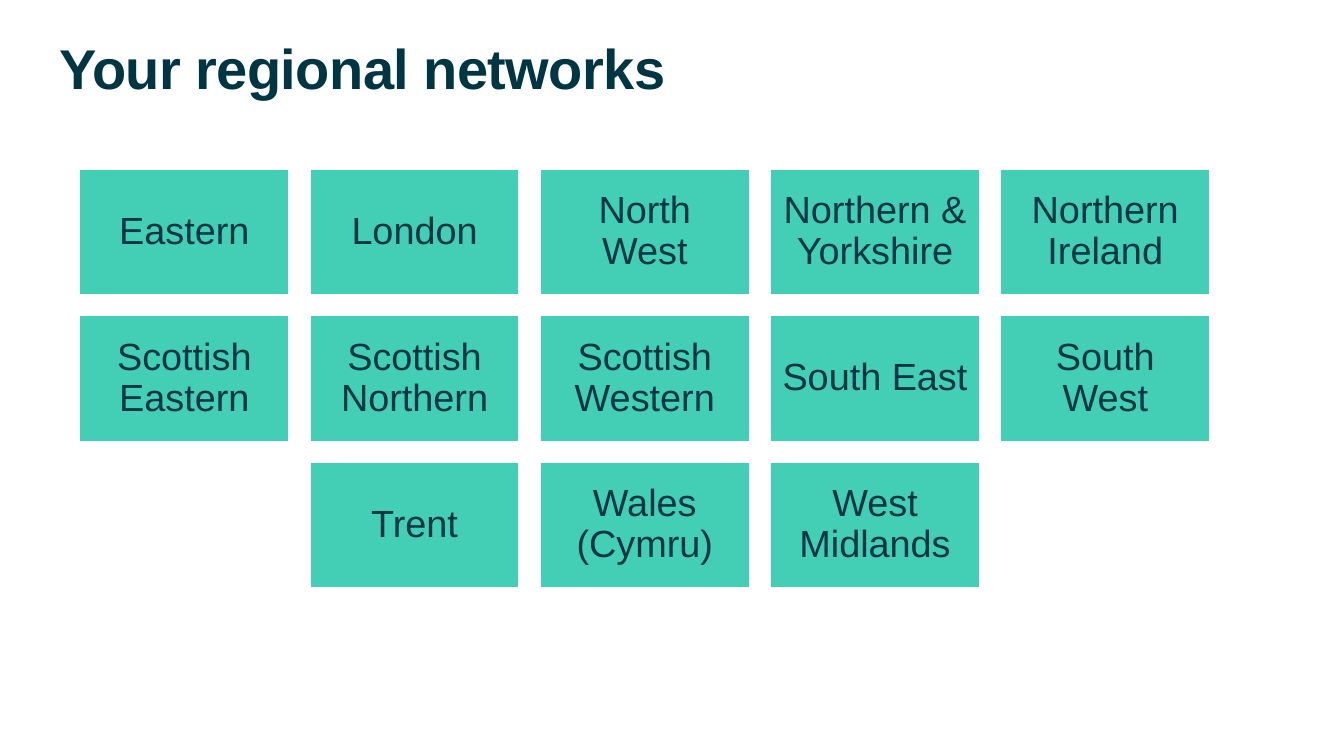
from dataclasses import dataclass

from pptx import Presentation
from pptx.dml.color import RGBColor
from pptx.enum.shapes import MSO_SHAPE
from pptx.enum.text import MSO_ANCHOR, PP_ALIGN
from pptx.util import Inches, Pt


@dataclass(frozen=True)
class Theme:
    font: str = "Arial"
    ink: RGBColor = RGBColor(0x00, 0x36, 0x43)
    tile: RGBColor = RGBColor(0x43, 0xCF, 0xB5)
    edge: RGBColor = RGBColor(0xFF, 0xFF, 0xFF)
    title_size: int = 40
    tile_size: int = 27
    line_spacing: float = 0.9
    tracking: int = -40  # hundredths of a point


@dataclass(frozen=True)
class Grid:
    """Centred rows of tiles; the gap and height follow from the tile width."""
    left: float = 0.79
    top: float = 1.68
    width: float = 11.21
    columns: int = 5
    gap_share: float = 0.1
    height_share: float = 0.6

    @property
    def tile_width(self):
        return self.width / (self.columns + (self.columns - 1) * self.gap_share)

    @property
    def tile_height(self):
        return self.tile_width * self.height_share

    def cell(self, column, row):
        gap = self.tile_width * self.gap_share
        return (self.left + column * (self.tile_width + gap),
                self.top + row * (self.tile_height + gap),
                self.tile_width, self.tile_height)


class SlideBuilder:
    def __init__(self, page, theme, grid):
        self.page, self.theme, self.grid = page, theme, grid

    def set_text(self, shape, text, size, inset=0, bold=False):
        frame = shape.text_frame
        frame.word_wrap = True
        frame.margin_left = frame.margin_right = Inches(inset)
        frame.margin_top = frame.margin_bottom = Inches(inset)
        frame.text = text
        para = frame.paragraphs[0]
        para.line_spacing = self.theme.line_spacing
        span = para.runs[0]
        span.font.name = self.theme.font
        span.font.size = Pt(size)
        span.font.bold = bold
        span.font.color.rgb = self.theme.ink
        return frame, para, span

    def title(self, text):
        box = self.page.shapes.add_textbox(*map(Inches, (0.59, 0.41, 12.2, 0.79)))
        _, _, span = self.set_text(box, text, self.theme.title_size, bold=True)
        span.font._element.set("spc", str(self.theme.tracking))

    def tile(self, text, column, row):
        box = self.page.shapes.add_shape(
            MSO_SHAPE.RECTANGLE, *map(Inches, self.grid.cell(column, row)))
        box.shadow.inherit = False
        box.fill.solid()
        box.fill.fore_color.rgb = self.theme.tile
        box.line.color.rgb = self.theme.edge
        box.line.width = Pt(1)
        frame, para, _ = self.set_text(box, text, self.theme.tile_size, inset=0.11)
        frame.vertical_anchor = MSO_ANCHOR.MIDDLE
        para.alignment = PP_ALIGN.CENTER

    def tile_row(self, names, row):
        first_column = (self.grid.columns - len(names)) / 2
        for index, name in enumerate(names):
            self.tile(name, first_column + index, row)


NETWORKS = [
    ["Eastern", "London", "North West", "Northern & Yorkshire", "Northern Ireland"],
    ["Scottish Eastern", "Scottish Northern", "Scottish Western", "South East",
     "South West"],
    ["Trent", "Wales (Cymru)", "West Midlands"],
]


def main():
    deck = Presentation()
    deck.slide_width, deck.slide_height = Inches(13.33), Inches(7.5)
    page = deck.slides.add_slide(deck.slide_layouts[6])
    builder = SlideBuilder(page, Theme(), Grid())

    # Heading
    builder.title("Your regional networks")

    # Network tiles
    for row, names in enumerate(NETWORKS):
        builder.tile_row(names, row)

    deck.save("out.pptx")


if __name__ == "__main__":
    main()
